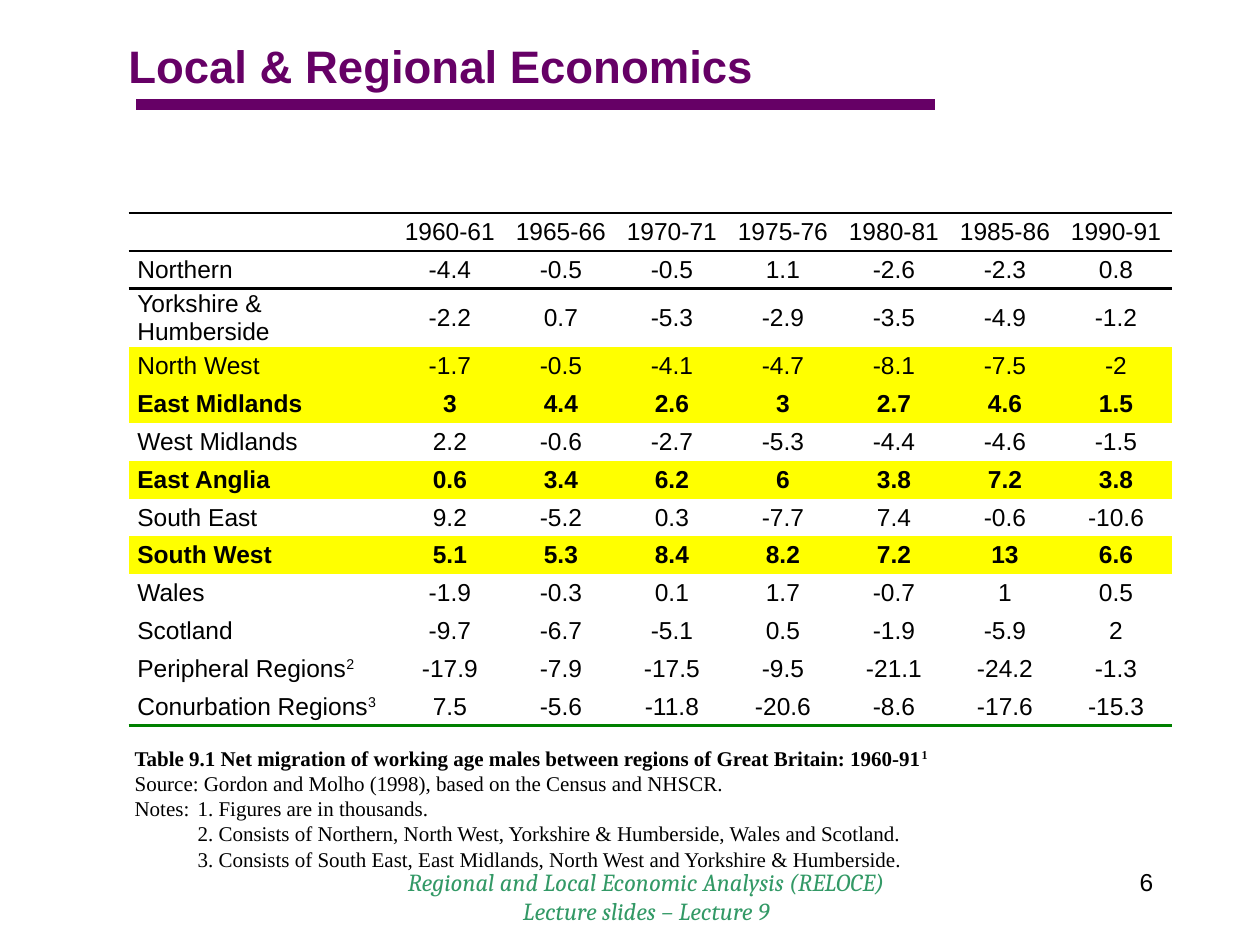
from lxml import etree
from pptx import Presentation
from pptx import util as u
from pptx.dml.color import RGBColor
from pptx.enum import shapes, text
from pptx.oxml import ns

COLOURS = {
    "purple": "660066",
    "black": "000000",
    "footer": "339966",
    "highlight": "FFFF00",
    "green": "008000",
}
PLAIN_TABLE_STYLE = "{2D5ABB26-0587-4C30-8999-92F81FD0307C}"

YEARS = ["1960-61", "1965-66", "1970-71", "1975-76", "1980-81", "1985-86", "1990-91"]
# region, note number, migration figures
REGIONS = [
    ("Northern", "", "-4.4 -0.5 -0.5 1.1 -2.6 -2.3 0.8"),
    ("Yorkshire & Humberside", "", "-2.2 0.7 -5.3 -2.9 -3.5 -4.9 -1.2"),
    ("North West", "", "-1.7 -0.5 -4.1 -4.7 -8.1 -7.5 -2"),
    ("East Midlands", "", "3 4.4 2.6 3 2.7 4.6 1.5"),
    ("West Midlands", "", "2.2 -0.6 -2.7 -5.3 -4.4 -4.6 -1.5"),
    ("East Anglia", "", "0.6 3.4 6.2 6 3.8 7.2 3.8"),
    ("South East", "", "9.2 -5.2 0.3 -7.7 7.4 -0.6 -10.6"),
    ("South West", "", "5.1 5.3 8.4 8.2 7.2 13 6.6"),
    ("Wales", "", "-1.9 -0.3 0.1 1.7 -0.7 1 0.5"),
    ("Scotland", "", "-9.7 -6.7 -5.1 0.5 -1.9 -5.9 2"),
    ("Peripheral Regions", "2", "-17.9 -7.9 -17.5 -9.5 -21.1 -24.2 -1.3"),
    ("Conurbation Regions", "3", "7.5 -5.6 -11.8 -20.6 -8.6 -17.6 -15.3"),
]
BOLD_REGIONS = {"East Midlands", "East Anglia", "South West"}
HIGHLIGHTED_REGIONS = BOLD_REGIONS | {"North West"}

NOTES = [
    "Table 9.1 Net migration of working age males between regions of Great Britain: 1960-91",
    "Source: Gordon and Molho (1998), based on the Census and NHSCR.",
    "Notes:\t1. Figures are in thousands.",
    "\t2. Consists of Northern, North West, Yorkshire & Humberside, Wales and Scotland.",
    "\t3. Consists of South East, East Midlands, North West and Yorkshire & Humberside.",
]


def style_runs(para, size, font="Arial", colour="black", bold=False, italic=False):
    for span in para.runs:
        span.font.size = u.Pt(size)
        span.font.name = font
        span.font.bold = bold
        span.font.italic = italic
        span.font.color.rgb = RGBColor.from_string(COLOURS[colour])


def add_superscript(para, mark):
    span = para.add_run()
    span.text = mark
    span._r.get_or_add_rPr().set("baseline", "30000")


def add_text_box(page, left, top, width, height):
    box = page.shapes.add_textbox(
        u.Inches(left), u.Inches(top), u.Inches(width), u.Inches(height)
    )
    box.text_frame.word_wrap = True
    return box.text_frame


def add_heading(page, left, top, width, height):
    frame = add_text_box(page, left, top, width, height)
    frame.text = "Local & Regional Economics"
    style_runs(frame.paragraphs[0], 26, colour="purple", bold=True)

    rule_left, rule_top = u.Inches(left + 0.16), u.Inches(top + 0.58)
    rule = page.shapes.add_connector(
        shapes.MSO_CONNECTOR.STRAIGHT,
        rule_left, rule_top, rule_left + u.Inches(6.34), rule_top,
    )
    rule.line.color.rgb = RGBColor.from_string(COLOURS["purple"])
    rule.line.width = u.Pt(6)
    etree.SubElement(rule._element.spPr, ns.qn("a:effectLst"))


def add_border(cell, side, colour):
    """Draw the top ("T") or bottom ("B") edge of a cell."""
    line = etree.SubElement(
        cell._tc.get_or_add_tcPr(), ns.qn(f"a:ln{side}"), w=str(u.Pt(1.5))
    )
    fill = etree.SubElement(line, ns.qn("a:solidFill"))
    etree.SubElement(fill, ns.qn("a:srgbClr"), val=COLOURS[colour])


def format_cell(cell, centred, bold, highlighted):
    cell.vertical_anchor = text.MSO_ANCHOR.MIDDLE
    cell.margin_left = cell.margin_right = u.Inches(0.07)
    cell.margin_top = cell.margin_bottom = 0
    if highlighted:
        cell.fill.solid()
        cell.fill.fore_color.rgb = RGBColor.from_string(COLOURS["highlight"])
    else:
        cell.fill.background()
    para = cell.text_frame.paragraphs[0]
    if centred:
        para.alignment = text.PP_ALIGN.CENTER
        para.space_before = para.space_after = u.Pt(3)
    style_runs(para, 14, bold=bold)


def add_migration_table(page, left, top, width, height):
    rows = [("", "", YEARS)]
    rows += [(name, mark, figures.split()) for name, mark, figures in REGIONS]
    region_width, row_height = 2.11, 0.3
    frame = page.shapes.add_table(
        len(rows), len(YEARS) + 1,
        u.Inches(left), u.Inches(top), u.Inches(width), u.Inches(height),
    )
    table = frame.table
    table.first_row = table.horz_banding = False
    table._tbl.tblPr.find(ns.qn("a:tableStyleId")).text = PLAIN_TABLE_STYLE

    for index, column in enumerate(table.columns):
        year_width = (width - region_width) / len(YEARS)
        column.width = u.Inches(year_width if index else region_width)

    last = len(rows) - 1
    for row_index, (name, mark, figures) in enumerate(rows):
        wraps = name == "Yorkshire & Humberside"
        table.rows[row_index].height = u.Inches(0.44 if wraps else row_height)
        for column_index, value in enumerate([name, *figures]):
            cell = table.cell(row_index, column_index)
            if value:
                cell.text = value
            if mark and column_index == 0:
                add_superscript(cell.text_frame.paragraphs[0], mark)
            if row_index <= 1:
                add_border(cell, "T", "black")
            if row_index == 0:
                add_border(cell, "B", "black")
            if row_index == last:
                add_border(cell, "B", "green")
            format_cell(
                cell,
                centred=bool(column_index),
                bold=name in BOLD_REGIONS,
                highlighted=name in HIGHLIGHTED_REGIONS,
            )


def add_notes(page, left, top, width, height):
    frame = add_text_box(page, left, top, width, height)
    frame.vertical_anchor = text.MSO_ANCHOR.MIDDLE
    for index, line in enumerate(NOTES):
        para = frame.paragraphs[0] if index == 0 else frame.add_paragraph()
        properties = para._p.get_or_add_pPr()
        properties.set("marL", "0")
        properties.set("indent", str(u.Inches(0.5)))
        tabs = etree.SubElement(properties, ns.qn("a:tabLst"))
        etree.SubElement(tabs, ns.qn("a:tab"), pos=str(u.Inches(2)), algn="l")
        span = para.add_run()
        span.text = line
        if index == 0:
            add_superscript(para, "1")
        style_runs(para, 12, font="Times New Roman", bold=index == 0)


def add_footer(page, left, top, width, height):
    title_width, number_width = 4.42, 2.08
    frame = add_text_box(page, left, top, title_width, height)
    frame.text = "Regional and Local Economic Analysis (RELOCE) Lecture slides – Lecture 9"
    frame.paragraphs[0].alignment = text.PP_ALIGN.CENTER
    style_runs(frame.paragraphs[0], 14, font="Cambria", colour="footer", italic=True)

    frame = add_text_box(page, left + width - number_width, top, number_width, height)
    frame.text = "6"
    frame.paragraphs[0].alignment = text.PP_ALIGN.RIGHT
    style_runs(frame.paragraphs[0], 14)


def main():
    deck = Presentation()
    deck.slide_width, deck.slide_height = u.Inches(10), u.Inches(7.5)
    page = deck.slides.add_slide(deck.slide_layouts[6])
    add_heading(page, 0.92, 0.25, 6.67, 0.54)
    add_footer(page, 2.92, 6.83, 6.33, 0.5)
    add_migration_table(page, 1.02, 1.69, 8.28, 4.05)
    add_notes(page, 0.47, 5.86, 8.98, 1.11)
    deck.save("out.pptx")


if __name__ == "__main__":
    main()
